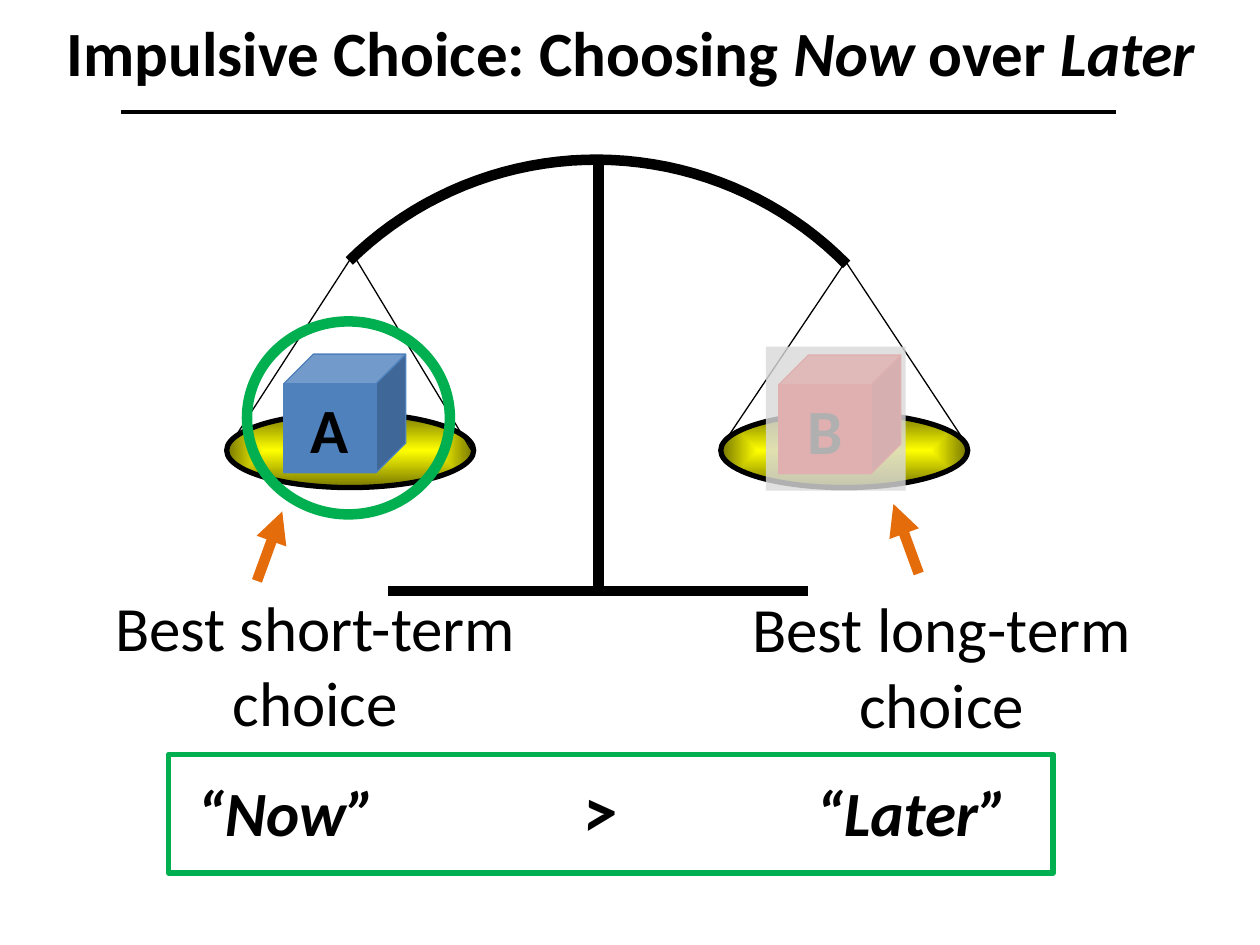
import math
import pptx
import pptx.util
import pptx.dml.color
import pptx.enum.shapes
import pptx.enum.text
import pptx.oxml
import pptx.oxml.ns

Cm, Pt = pptx.util.Cm, pptx.util.Pt
rgb = pptx.dml.color.RGBColor.from_string
Form = pptx.enum.shapes.MSO_SHAPE
Align = pptx.enum.text.PP_ALIGN
Anchor = pptx.enum.text.MSO_ANCHOR
NS = pptx.oxml.ns.nsdecls("a")

deck = pptx.Presentation()
deck.slide_width, deck.slide_height = Cm(25.4), Cm(19.05)
slide = deck.slides.add_slide(deck.slide_layouts[6])
shapes = slide.shapes


def draw_line(ends, width, ink="000000"):
    line = shapes.add_connector(
        pptx.enum.shapes.MSO_CONNECTOR.STRAIGHT, *map(Cm, ends))
    line.line.color.rgb = rgb(ink)
    line.line.width = Pt(width)
    line._element.spPr.append(pptx.oxml.parse_xml(f"<a:effectLst {NS}/>"))
    return line


def draw_shape(form, box, fill=None, ink=None, width=0.75):
    """Add a preset shape; a fill or ink of None leaves that part out."""
    shape = shapes.add_shape(form, *map(Cm, box))
    shape.shadow.inherit = False
    if fill:
        shape.fill.solid()
        shape.fill.fore_color.rgb = rgb(fill)
    else:
        shape.fill.background()
    if ink:
        shape.line.color.rgb = rgb(ink)
        shape.line.width = Pt(width)
    else:
        shape.line.fill.background()
    return shape


# Scale: post, base and a quarter-circle beam turned upright
draw_line((12.07, 3.15, 12.07, 11.91), 6)
draw_line((7.82, 11.91, 16.28, 11.91), 6)

left, top, size = 8.51, 1.75, 7.09
steps = 40
curve = []
for step in range(steps + 1):
    turn = math.pi / 2 * step / steps
    curve.append((Cm(left + size * math.sin(turn)),
                  Cm(top + size * (1 - math.cos(turn)))))
path = shapes.build_freeform(*curve[0])
path.add_line_segments(curve[1:], close=False)
beam = path.convert_to_shape()
beam.shadow.inherit = False
beam.fill.background()
beam.line.color.rgb = rgb("000000")
beam.line.width = Pt(6)
beam.rotation = 315.4

# Pans, each hung on two strings
glow = f"""<a:gradFill {NS} rotWithShape="1"><a:gsLst>
<a:gs pos="0"><a:srgbClr val="FFFF00"/></a:gs>
<a:gs pos="100000"><a:srgbClr val="767600"/></a:gs></a:gsLst>
<a:path path="shape"><a:fillToRect l="50000" t="50000" r="50000" b="50000"/>
</a:path></a:gradFill>"""
pans = [
    (4.57, [(4.57, 9.07, 7.09, 5.18), (9.5, 9.07, 7.09, 5.08)]),
    (14.53, [(14.55, 8.99, 17.04, 5.28), (19.46, 8.92, 17.02, 5.23)]),
]
for left, strings in pans:
    pan = draw_shape(Form.OVAL, (left, 8.33, 4.98, 1.5), ink="000000", width=3)
    props = pan._element.spPr
    props.replace(props.find(pptx.oxml.ns.qn("a:noFill")),
                  pptx.oxml.parse_xml(glow))
    for ends in strings:
        draw_line(ends, 0.75)

draw_line((2.44, 2.26, 22.5, 2.26), 2.25)

# Cubes on the pans
for name, left, top, hue in [("A", 5.72, 7.14, "4F81BD"),
                             ("B", 15.7, 7.16, "FF0000")]:
    cube = draw_shape(Form.CUBE, (left, top, 2.46, 2.39), hue, hue)
    cube.text_frame.text = name
    cube.text_frame.vertical_anchor = Anchor.MIDDLE
    para = cube.text_frame.paragraphs[0]
    para.alignment = Align.CENTER
    font = para.runs[0].font
    font.name, font.size, font.bold = "Calibri", Pt(36), True
    font.color.rgb = rgb("000000")

# Text: box, lines, size, bold, italic, wrap, tilt
labels = [
    ((12.57, 11.76, 12.83, 3.3), "Best long-term\nchoice",
     36, False, False, True, 0),
    ((1.07, 11.73, 10.57, 3.3), "Best short-term choice",
     36, False, False, True, 0),
    ((3.73, 15.47, 4.19, 1.78), "“Now”", 36, True, True, False, 0),
    ((16.21, 15.47, 4.39, 1.8), "“Later”", 36, True, True, False, 0),
    ((11.51, 15.34, 1.22, 1.96), ">", 40, True, True, False, 355.1),
]
for box, words, size, bold, slant, wrap, tilt in labels:
    label = shapes.add_textbox(*map(Cm, box))
    label.rotation = tilt
    frame = label.text_frame
    frame.word_wrap = wrap
    frame.text = words
    for para in frame.paragraphs:
        para.alignment = Align.CENTER if wrap else Align.LEFT
        font = para.runs[0].font
        font.name, font.size = "Calibri", Pt(size)
        font.bold, font.italic = bold, slant
        font.color.rgb = rgb("000000")

title = shapes.add_textbox(Cm(0.79), Cm(0), Cm(23.85), Cm(2.08))
title.text_frame.word_wrap = True
title.text_frame.vertical_anchor = Anchor.MIDDLE
para = title.text_frame.paragraphs[0]
para.alignment = Align.CENTER
for words, slant in [("Impulsive Choice: Choosing ", False), ("Now ", True),
                     ("over ", False), ("Later", True)]:
    run = para.add_run()
    run.text = words
    font = run.font
    font.name, font.size = "Calibri", Pt(36)
    font.bold, font.italic = True, slant
    font.color.rgb = rgb("000000")

# Arrows from the labels to the pans
for ends in [(5.18, 11.71, 5.69, 10.31), (18.52, 11.56, 18.01, 10.16)]:
    arrow = draw_line(ends, 6, "E46C0A")
    arrow.line._get_or_add_ln().append(
        pptx.oxml.parse_xml(f'<a:tailEnd {NS} type="triangle"/>'))

# Ring on the chosen cube, frame on the outcome, veil on the lost cube
draw_shape(Form.OVAL, (4.98, 6.48, 4.09, 3.89), ink="00B050", width=6)
draw_shape(Form.RECTANGLE, (3.4, 15.21, 17.83, 2.39), ink="00B050", width=3.25)
veil = draw_shape(Form.RECTANGLE, (15.44, 6.99, 2.82, 2.9), "D9D9D9")
tint = veil._element.spPr.find(".//" + pptx.oxml.ns.qn("a:srgbClr"))
tint.append(pptx.oxml.parse_xml(f'<a:alpha {NS} val="81000"/>'))

deck.save("out.pptx")
